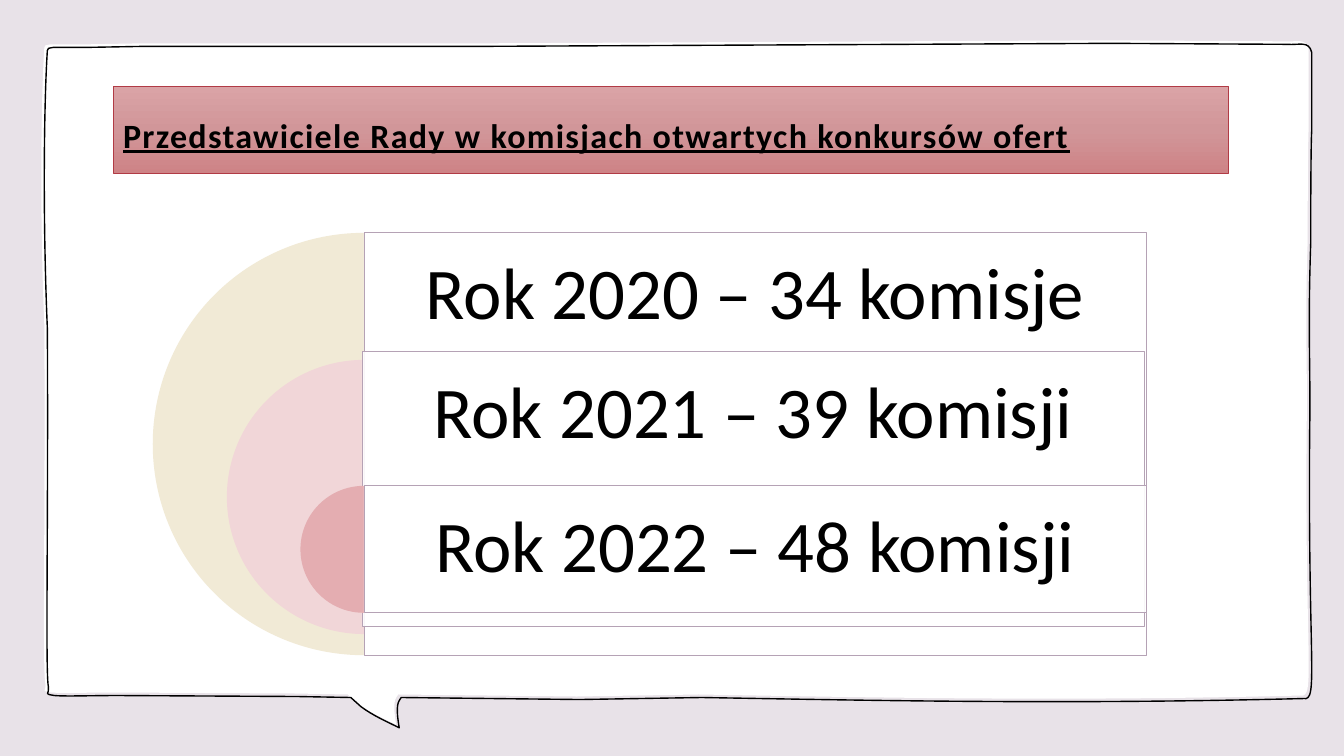
"""Builds a slide about council representatives in open tender committees."""
from copy import deepcopy
from dataclasses import dataclass

from lxml import etree
from pptx import Presentation
from pptx.dml.color import RGBColor
from pptx.enum.shapes import MSO_SHAPE
from pptx.enum.text import MSO_ANCHOR, MSO_AUTO_SIZE, PP_ALIGN
from pptx.oxml.ns import qn
from pptx.util import Inches, Pt

PIE, RECTANGLE = MSO_SHAPE.PIE, MSO_SHAPE.RECTANGLE
MIDDLE, NO_FIT = MSO_ANCHOR.MIDDLE, MSO_AUTO_SIZE.NONE
LEFT, CENTER = PP_ALIGN.LEFT, PP_ALIGN.CENTER

FONT = "Calibri"
BACKGROUND = RGBColor(0xE8, 0xE2, 0xE8)
WHITE = RGBColor(0xFF, 0xFF, 0xFF)
BLACK = RGBColor(0x00, 0x00, 0x00)
TITLE_TOP = RGBColor(0xDA, 0xA3, 0xA6)
TITLE_MIDDLE = RGBColor(0xD1, 0x96, 0x99)
TITLE_BOTTOM = RGBColor(0xCE, 0x83, 0x86)
TITLE_LINE = RGBColor(0xB1, 0x3B, 0x45)
PANEL_LINE = RGBColor(0xB5, 0xA2, 0xB5)
CREAM = RGBColor(0xF1, 0xEA, 0xD6)
PINK = RGBColor(0xF1, 0xD6, 0xD8)
ROSE = RGBColor(0xE4, 0xAD, 0xB1)

PIE_CENTER = 3.61
PANEL_WIDTH = 7.76
BAND_HEIGHT = 1.26
BUBBLE_OFFSET = 0.03

Point = tuple[float, float]

BUBBLE_START: Point = (10.99, 0.4)
BUBBLE: list[tuple[Point, ...]] = [
    ((12.73, 0.41),),
    ((12.86, 0.42), (12.95, 0.37), (12.98, 0.49)),
    ((12.98, 0.76),),
    ((12.98, 0.93), (12.98, 1.1), (12.98, 1.27)),
    ((12.97, 1.4), (12.97, 2.33), (12.97, 2.39)),
    ((12.94, 3.27), (12.97, 3.63), (12.96, 4.22)),
    ((12.94, 6.54), (13.05, 6.93), (12.9, 6.9)),
    ((10.53, 6.96), (8.69, 6.92), (6.93, 6.89)),
    ((5.72, 6.91),),
    ((3.95, 6.89),),
    ((3.93, 6.92),),
    ((3.9, 6.97), (3.91, 7.07), (3.93, 7.19)),
    ((3.81, 7.13), (3.67, 7.07), (3.55, 6.98)),
    ((3.45, 6.89),),
    ((2.92, 6.88),),
    ((1.14, 6.87),),
    ((0.86, 6.87), (0.63, 6.88), (0.51, 6.87)),
    ((0.4, 6.85), (0.46, 6.87), (0.45, 6.78)),
    ((0.42, 6.63), (0.45, 5.19), (0.44, 3.23)),
    ((0.39, 2.04), (0.41, 0.93), (0.44, 0.47)),
    ((0.45, 0.46), (0.45, 0.45), (0.45, 0.45)),
    ((0.5, 0.44),),
    ((0.74, 0.44),),
    ((0.86, 0.44),),
    ((1.4, 0.43),),
    ((4.77, 0.43),),
    (BUBBLE_START,),
]


@dataclass(frozen=True)
class Year:
    """One year with its half disc and its panel."""
    text: str
    top: float
    diameter: float
    color: RGBColor
    panel_left: float
    panel_top: float


YEARS = [
    Year("Rok 2020 – 34 komisje", 2.31, 4.19, CREAM, 3.61, 2.31),
    Year("Rok 2021 – 39 komisji", 3.57, 2.72, PINK, 3.59, 3.49),
    Year("Rok 2022 – 48 komisji", 4.82, 1.26, ROSE, 3.61, 4.82),
]


def draw_bubble(page, offset: float):
    """Draw the speech bubble with real curves, shifted by the offset."""
    def place(point: Point) -> tuple[int, int]:
        """Return the shifted point in slide units."""
        return Inches(point[0] + offset), Inches(point[1] + offset)

    builder = page.shapes.build_freeform(*place(BUBBLE_START))
    builder.add_line_segments([place(segment[-1]) for segment in BUBBLE], close=True)
    bubble = builder.convert_to_shape()
    bubble.shadow.inherit = False
    lines = list(bubble._element.iter(qn("a:lnTo")))
    for line, segment in zip(lines, BUBBLE):
        if len(segment) == 1:
            continue
        curve = etree.Element(qn("a:cubicBezTo"))
        for x, y in map(place, segment):
            node = etree.SubElement(curve, qn("a:pt"))
            node.set("x", str(x - bubble.left))
            node.set("y", str(y - bubble.top))
        line.getparent().replace(line, curve)
    return bubble


def format_text(box, text: str, size: float, align: PP_ALIGN):
    """Set a single styled line in the box and return its run."""
    frame = box.text_frame
    frame.text = text
    frame.word_wrap = True
    frame.auto_size = NO_FIT
    frame.vertical_anchor = MIDDLE
    para = frame.paragraphs[0]
    para.alignment = align
    para.line_spacing = 0.9
    span = para.runs[0]
    span.font.name = FONT
    span.font.size = Pt(size)
    span.font.color.rgb = BLACK
    return span


def fill_title(title) -> None:
    """Give the title its three-stop vertical gradient."""
    title.fill.gradient()
    title.fill.gradient_angle = 270
    stops = title._element.spPr.find(qn("a:gradFill")).find(qn("a:gsLst"))
    middle = deepcopy(stops[0])
    middle.set("pos", "50000")
    stops.insert(1, middle)
    colors = (TITLE_TOP, TITLE_MIDDLE, TITLE_BOTTOM)
    for stop, color in zip(title.fill.gradient_stops, colors):
        stop.color.rgb = color


def draw_title(page, bubble) -> None:
    """Place and format the title in front of the bubble."""
    title = page.shapes.title
    bubble._element.addnext(title._element)
    title.left, title.top = Inches(1.12), Inches(0.86)
    title.width, title.height = Inches(11.06), Inches(0.86)
    fill_title(title)
    title.line.color.rgb = TITLE_LINE
    title.line.width = Pt(0.5)
    text = "Przedstawiciele Rady w komisjach otwartych konkursów ofert"
    span = format_text(title, text, 24.3, LEFT)
    span.font.bold = True
    span.font.underline = True
    span._r.get_or_add_rPr().set("spc", "100")
    title.text_frame.margin_top = Inches(0.19)


def draw_year(page, year: Year) -> None:
    """Draw the half disc, the panel and the text of a year."""
    size = Inches(year.diameter)
    disc = page.shapes.add_shape(
        PIE, Inches(PIE_CENTER - year.diameter / 2), Inches(year.top), size, size)
    disc.adjustments[0], disc.adjustments[1] = 54, 162
    disc.shadow.inherit = False
    disc.fill.solid()
    disc.fill.fore_color.rgb = year.color
    disc.line.fill.background()

    left, top, width = Inches(year.panel_left), Inches(year.panel_top), Inches(PANEL_WIDTH)
    panel = page.shapes.add_shape(RECTANGLE, left, top, width, size)
    panel.shadow.inherit = False
    panel.fill.solid()
    panel.fill.fore_color.rgb = WHITE
    color = panel._element.spPr.find(qn("a:solidFill"))[0]
    etree.SubElement(color, qn("a:alpha")).set("val", "90000")
    panel.line.color.rgb = PANEL_LINE
    panel.line.width = Pt(0.5)

    box = page.shapes.add_textbox(left, top, width, Inches(BAND_HEIGHT))
    format_text(box, year.text, 52, CENTER)
    frame = box.text_frame
    frame.margin_left = frame.margin_right = Inches(0.22)
    frame.margin_top = frame.margin_bottom = Inches(0.22)


def main() -> None:
    """Build and save the deck."""
    deck = Presentation()
    deck.slide_width, deck.slide_height = Inches(13.33), Inches(7.5)
    page = deck.slides.add_slide(deck.slide_layouts[5])
    page.background.fill.solid()
    page.background.fill.fore_color.rgb = BACKGROUND

    paper = draw_bubble(page, 0)
    paper.fill.solid()
    paper.fill.fore_color.rgb = WHITE
    paper.line.fill.background()
    outline = draw_bubble(page, BUBBLE_OFFSET)
    outline.fill.background()
    outline.line.color.rgb = BLACK
    outline.line.width = Pt(1)

    draw_title(page, outline)
    for year in YEARS:
        draw_year(page, year)
    deck.save("out.pptx")


if __name__ == "__main__":
    main()
